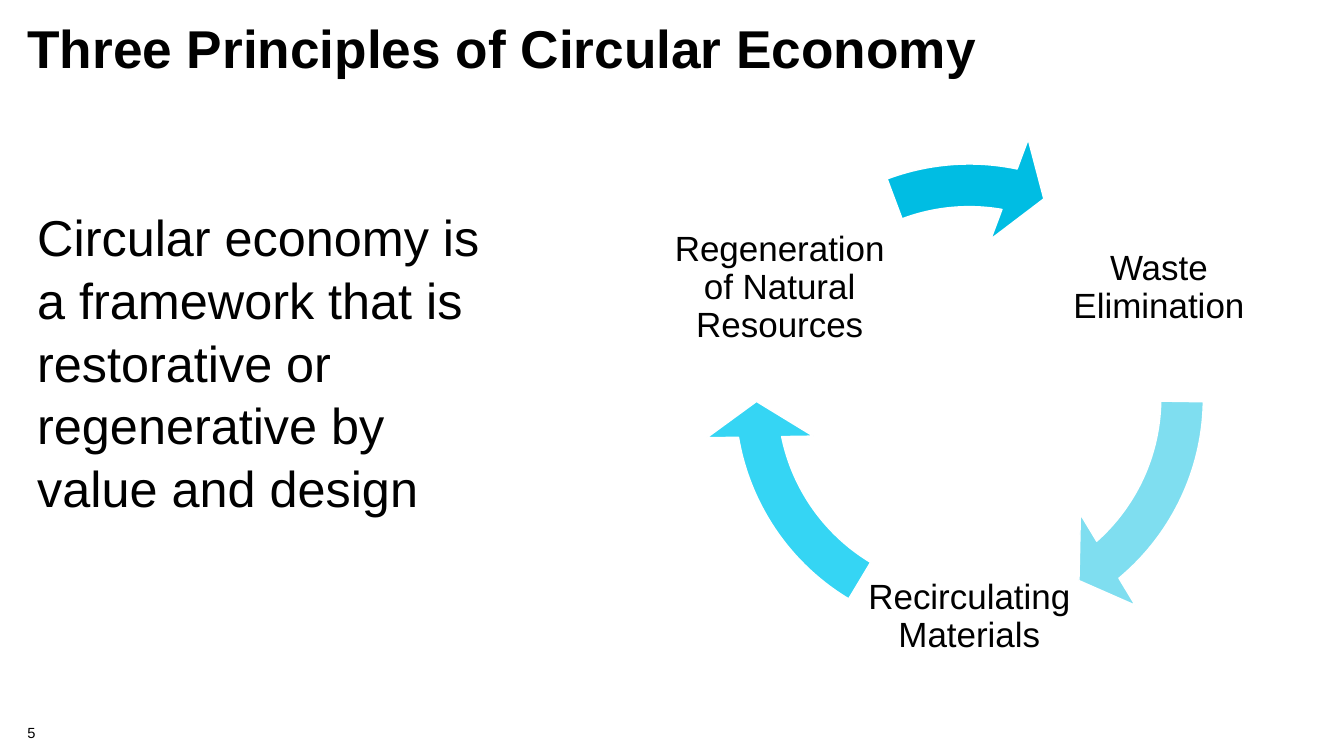
from pptx import Presentation
from pptx.dml.color import RGBColor
from pptx.enum.shapes import MSO_SHAPE
from pptx.enum.text import MSO_ANCHOR, MSO_AUTO_SIZE, PP_ALIGN
from pptx.util import Cm, Pt

CIRCULAR_ARROW = MSO_SHAPE.CIRCULAR_ARROW
TOP, MIDDLE = MSO_ANCHOR.TOP, MSO_ANCHOR.MIDDLE
LEFT, CENTER = PP_ALIGN.LEFT, PP_ALIGN.CENTER
NO_FIT, GROW = MSO_AUTO_SIZE.NONE, MSO_AUTO_SIZE.SHAPE_TO_FIT_TEXT

COLORS = {
    "text": "000000",
    "outline": "FFFFFF",
    "waste": "7FDEF0",
    "materials": "35D5F4",
    "resources": "00BDE3",
}
LABEL_SIZE = 5.69
CYCLE_BOX = (17.73, 3.33, 13.41, 13.41)
STAGES = [
    ("Waste Elimination", 26.37, 4.42, "waste", 29.62, 0.53),
    ("Recirculating Materials", 21.59, 12.7, "materials", 101.71, 72.61),
    ("Regeneration of Natural Resources", 16.81, 4.42, "resources", 168.55, 149.68),
]


def apply_format(target, values):
    for name, value in values.items():
        setattr(target, name, value)


class CycleSlide:
    font_name = "Arial"

    def __init__(self, presentation):
        self.slide = presentation.slides.add_slide(presentation.slide_layouts[5])

    def color(self, key):
        return RGBColor.from_string(COLORS[key])

    def fill_text(self, holder, words, size, inset=(0, 0), anchor=TOP, fit=NO_FIT,
                  bold=False, **paragraph_format):
        frame = holder.text_frame
        frame.text = words
        across, down = (Cm(length) for length in inset)
        apply_format(frame, {
            "word_wrap": True,
            "auto_size": fit,
            "vertical_anchor": anchor,
            "margin_left": across,
            "margin_right": across,
            "margin_top": down,
            "margin_bottom": down,
        })
        paragraph = frame.paragraphs[0]
        apply_format(paragraph, {"alignment": LEFT, **paragraph_format})
        font = paragraph.runs[0].font
        apply_format(font, {"name": self.font_name, "size": Pt(size), "bold": bold})
        font.color.rgb = self.color("text")

    def title(self, words, box, size, **text_format):
        heading = self.slide.shapes.title
        edges = ("left", "top", "width", "height")
        apply_format(heading, dict(zip(edges, map(Cm, box))))
        self.fill_text(heading, words, size, **text_format)

    def text(self, words, box, size, **text_format):
        holder = self.slide.shapes.add_textbox(*map(Cm, box))
        self.fill_text(holder, words, size, **text_format)

    def cycle_arrow(self, color_key, head_angle, tail_angle):
        arrow = self.slide.shapes.add_shape(CIRCULAR_ARROW, *map(Cm, CYCLE_BOX))
        for index, value in enumerate((0.08, 5.76, head_angle, tail_angle, 0.1)):
            arrow.adjustments[index] = value
        arrow.shadow.inherit = False
        arrow.fill.solid()
        arrow.fill.fore_color.rgb = self.color(color_key)
        arrow.line.color.rgb = self.color("outline")
        arrow.line.width = Pt(1)


def main():
    presentation = Presentation()
    apply_format(presentation, {"slide_width": Cm(33.88), "slide_height": Cm(19.05)})
    slide = CycleSlide(presentation)
    body_spacing = {"space_before": Pt(3), "space_after": Pt(3)}

    slide.title("Three Principles of Circular Economy", (0.69, 0.58, 32.51, 1.47), 38,
                fit=GROW, bold=True, line_spacing=0.9, space_after=Pt(6))
    slide.text("5", (0.69, 18.16, 1.45, 0.61), 10.5, anchor=MIDDLE, **body_spacing)
    for label, left, top, color_key, head_angle, tail_angle in STAGES:
        slide.text(label, (left, top, LABEL_SIZE, LABEL_SIZE), 25, inset=(0.08, 0.08),
                   anchor=MIDDLE, alignment=CENTER, line_spacing=0.9)
        slide.cycle_arrow(color_key, head_angle, tail_angle)
    slide.text("Circular economy is a framework that is restorative or regenerative "
               "by value and design", (0.69, 5, 12.45, 7.95), 36, inset=(0.25, 0.13),
               fit=GROW, line_spacing=1.04, **body_spacing)
    presentation.save("out.pptx")


if __name__ == "__main__":
    main()
